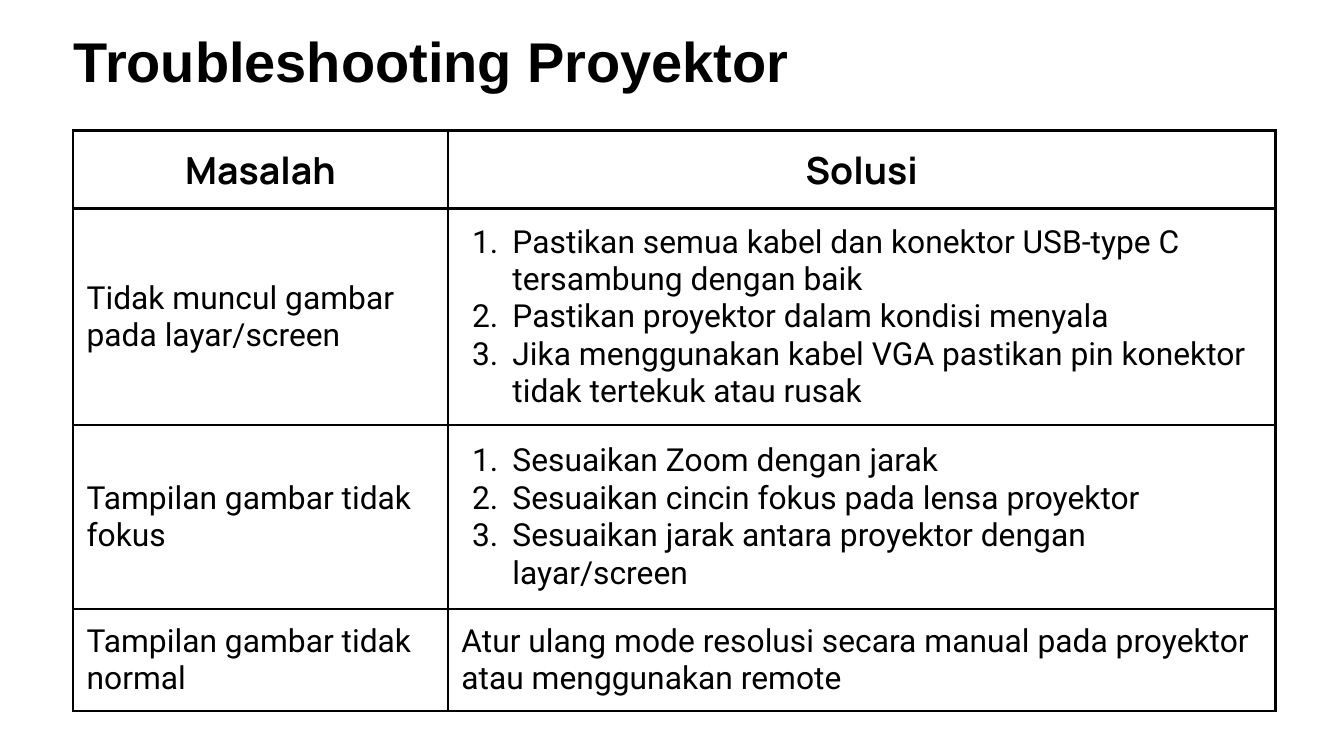
from lxml.etree import SubElement
from pptx import Presentation
from pptx.dml.color import RGBColor
from pptx.enum.text import MSO_ANCHOR, MSO_AUTO_SIZE, PP_ALIGN
from pptx.oxml.ns import qn
from pptx.util import Pt

COLORS = {"ink": "000000", "paper": "FFFFFF"}
INSET = 7.2
HEADERS = ["Masalah", "Solusi"]
PROBLEMS = [
    ("Tidak muncul gambar pada layar/screen", [
        "Pastikan semua kabel dan konektor USB-type C tersambung dengan baik",
        "Pastikan proyektor dalam kondisi menyala",
        "Jika menggunakan kabel VGA pastikan pin konektor tidak tertekuk atau rusak",
    ]),
    ("Tampilan gambar tidak fokus", [
        "Sesuaikan Zoom dengan jarak",
        "Sesuaikan cincin fokus pada lensa proyektor",
        "Sesuaikan jarak antara proyektor dengan layar/screen",
    ]),
    ("Tampilan gambar tidak normal", [
        "Atur ulang mode resolusi secara manual pada proyektor atau menggunakan remote",
    ]),
]


class SlideBuilder:
    def __init__(self, page):
        self.page = page
        page.background.fill.solid()
        page.background.fill.fore_color.rgb = RGBColor.from_string(COLORS["paper"])

    def format_text(self, frame, font, size, bold, align):
        for paragraph in frame.paragraphs:
            paragraph.alignment = align
            for span in paragraph.runs:
                span.font.name = font
                span.font.size = Pt(size)
                span.font.bold = bold
                span.font.color.rgb = RGBColor.from_string(COLORS["ink"])

    def set_insets(self, item):
        item.margin_left = item.margin_right = Pt(INSET)
        item.margin_top = item.margin_bottom = Pt(INSET)
        item.vertical_anchor = MSO_ANCHOR.MIDDLE

    def title(self, text, left, top, width, height):
        box = self.page.shapes.title
        box.left, box.top, box.width, box.height = map(Pt, (left, top, width, height))
        frame = box.text_frame
        frame.text = text
        frame.word_wrap = True
        frame.auto_size = MSO_AUTO_SIZE.NONE
        self.set_insets(frame)
        self.format_text(frame, "Arial", 30, True, PP_ALIGN.LEFT)

    def table(self, left, top, widths, heights):
        grid = self.page.shapes.add_table(
            len(heights), len(widths), Pt(left), Pt(top), Pt(sum(widths)), Pt(sum(heights))
        ).table
        for column, width in zip(grid.columns, widths):
            column.width = Pt(width)
        for row, height in zip(grid.rows, heights):
            row.height = Pt(height)
        grid.first_row = grid.horz_banding = False
        return grid

    def cell(self, cell, lines, font="Roboto", size=17, bold=False, align=PP_ALIGN.LEFT):
        cell.text_frame.text = "\n".join(lines)
        self.set_insets(cell)
        self.format_text(cell.text_frame, font, size, bold, align)
        if len(lines) > 1:
            self.number(cell.text_frame)
        self.borders(cell)
        cell.fill.background()

    def number(self, frame):
        for paragraph in frame.paragraphs:
            properties = paragraph._p.get_or_add_pPr()
            properties.set("marL", str(Pt(27.36)))
            properties.set("indent", str(Pt(-21.6)))
            color = SubElement(properties, qn("a:buClr"))
            SubElement(color, qn("a:srgbClr"), val=COLORS["ink"])
            SubElement(properties, qn("a:buFont"), typeface="Roboto")
            SubElement(properties, qn("a:buAutoNum"), type="arabicPeriod")

    def borders(self, cell):
        properties = cell._tc.get_or_add_tcPr()
        for side in ("a:lnL", "a:lnR", "a:lnT", "a:lnB"):
            line = SubElement(properties, qn(side), w=str(Pt(1.5)))
            fill = SubElement(line, qn("a:solidFill"))
            SubElement(fill, qn("a:srgbClr"), val=COLORS["ink"])


def main():
    deck = Presentation()
    deck.slide_width, deck.slide_height = Pt(720), Pt(405)
    builder = SlideBuilder(deck.slides.add_slide(deck.slide_layouts[5]))
    builder.title("Troubleshooting Proyektor", 32.4, 11.8, 462, 41)

    grid = builder.table(39.2, 70, [200.8, 443.4], [26, 116, 98.5, 48])
    for column, header in enumerate(HEADERS):
        builder.cell(grid.cell(0, column), [header], "Manrope", 20, True, PP_ALIGN.CENTER)
    for row, (problem, solutions) in enumerate(PROBLEMS, start=1):
        builder.cell(grid.cell(row, 0), [problem])
        builder.cell(grid.cell(row, 1), solutions)

    deck.save("out.pptx")


if __name__ == "__main__":
    main()
